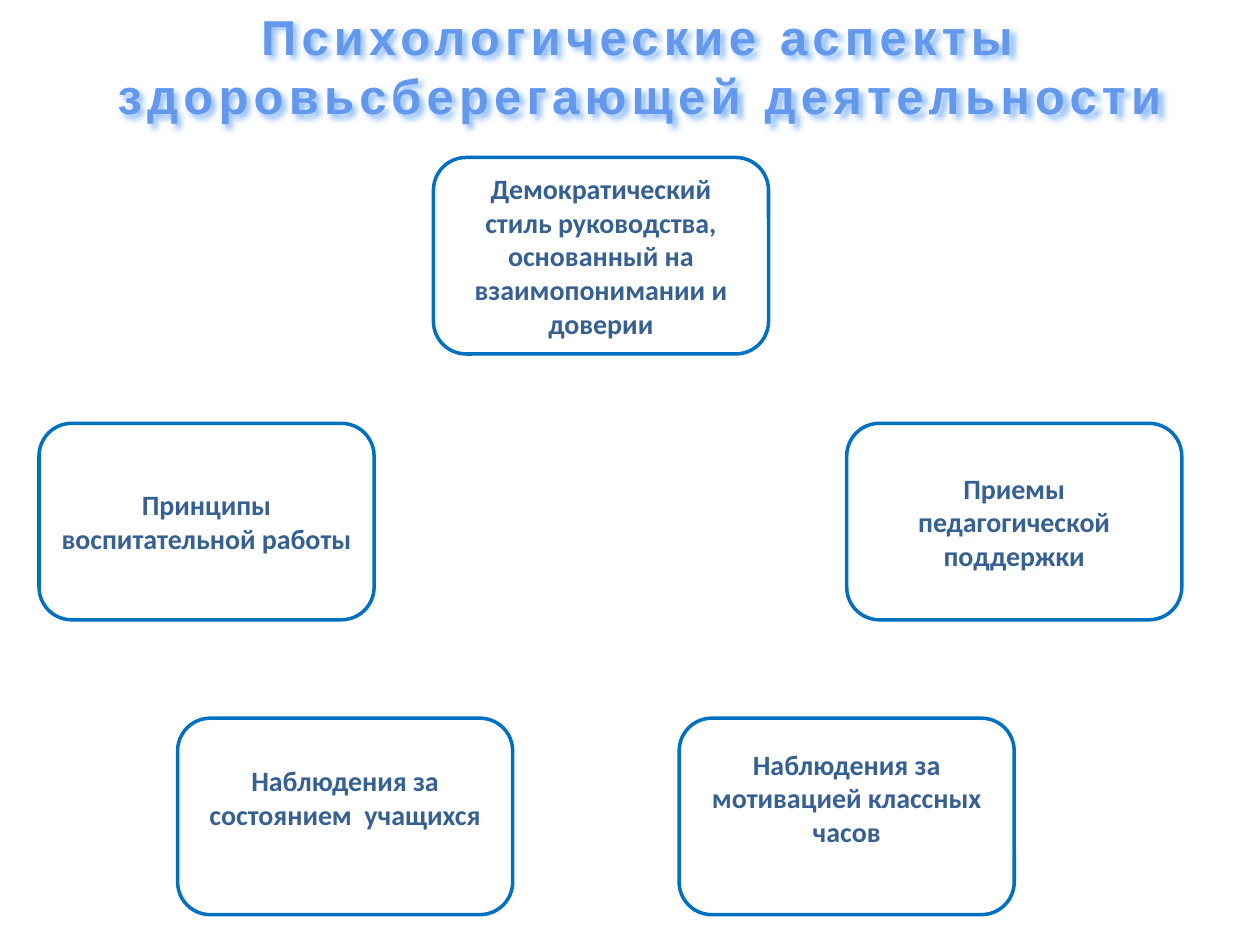
"""Builds a slide with five aspects of health-preserving work."""
import pptx
import pptx.dml.color
import pptx.enum.shapes
import pptx.enum.text
import pptx.oxml
import pptx.util
from pptx.util import Inches

BOX_W, BOX_H = 2.66, 1.56
ROWS = (1.25, 3.36, 5.7)
BOXES = [
    (3.44, ROWS[0], "Демократический стиль руководства, основанный на взаимопонимании и доверии", 0.05),
    (6.72, ROWS[1], "Приемы педагогической поддержки", 0.05),
    (0.31, ROWS[1], "Принципы воспитательной работы", 0.05),
    (5.39, ROWS[2], "Наблюдения за мотивацией классных часов", 0.35),
    (1.41, ROWS[2], "Наблюдения за состоянием  учащихся", 0.35),
]
SHADOW = (
    '<a:effectLst xmlns:a="http://schemas.openxmlformats.org/drawingml/2006/main">'
    '<a:outerShdw blurRad="38100" dist="32000" dir="2700000" algn="tl" rotWithShape="0">'
    '<a:srgbClr val="60A0FF"><a:alpha val="70000"/></a:srgbClr>'
    '</a:outerShdw></a:effectLst>'
)


def rgb(value):
    """Return the colour for a hex string."""
    return pptx.dml.color.RGBColor.from_string(value)


def format_text(tf, font, size, color):
    """Centre the single paragraph and format its run."""
    tf.word_wrap = True
    p = tf.paragraphs[0]
    p.alignment = pptx.enum.text.PP_ALIGN.CENTER
    r = p.runs[0]
    r.font.name = font
    r.font.size = pptx.util.Pt(size)
    r.font.bold = True
    r.font.color.rgb = rgb(color)
    return r


def set_title(s, text):
    """Fill and place the title with wide letters and a soft shadow."""
    sp = s.shapes.title
    sp.left, sp.top = Inches(0.47), Inches(0)
    sp.width, sp.height = Inches(9.22), Inches(1.04)
    tf = sp.text_frame
    tf.text = text
    tf.auto_size = pptx.enum.text.MSO_AUTO_SIZE.SHAPE_TO_FIT_TEXT
    tf.vertical_anchor = pptx.enum.text.MSO_ANCHOR.TOP
    r = format_text(tf, "Arial", 28, "6398ED")
    r.font._element.set("spc", "300")
    sp._element.spPr.append(pptx.oxml.parse_xml(SHADOW))


def add_box(s, left, top, text, bottom_margin):
    """Add a rounded box with centred text."""
    sp = s.shapes.add_shape(
        pptx.enum.shapes.MSO_SHAPE.ROUNDED_RECTANGLE,
        Inches(left), Inches(top), Inches(BOX_W), Inches(BOX_H))
    sp.shadow.inherit = False
    sp.fill.solid()
    sp.fill.fore_color.rgb = rgb("FFFFFF")
    sp.line.color.rgb = rgb("0070C0")
    sp.line.width = pptx.util.Pt(2)
    tf = sp.text_frame
    tf.text = text
    tf.vertical_anchor = pptx.enum.text.MSO_ANCHOR.MIDDLE
    tf.margin_bottom = Inches(bottom_margin)
    format_text(tf, "Calibri", 16, "376092")


def main():
    """Build and save the slide."""
    prs = pptx.Presentation()
    prs.slide_width, prs.slide_height = Inches(10), Inches(7.5)
    s = prs.slides.add_slide(prs.slide_layouts[5])
    set_title(s, "Психологические аспекты здоровьсберегающей деятельности")
    for box in BOXES:
        add_box(s, *box)
    prs.save("out.pptx")


if __name__ == "__main__":
    main()
